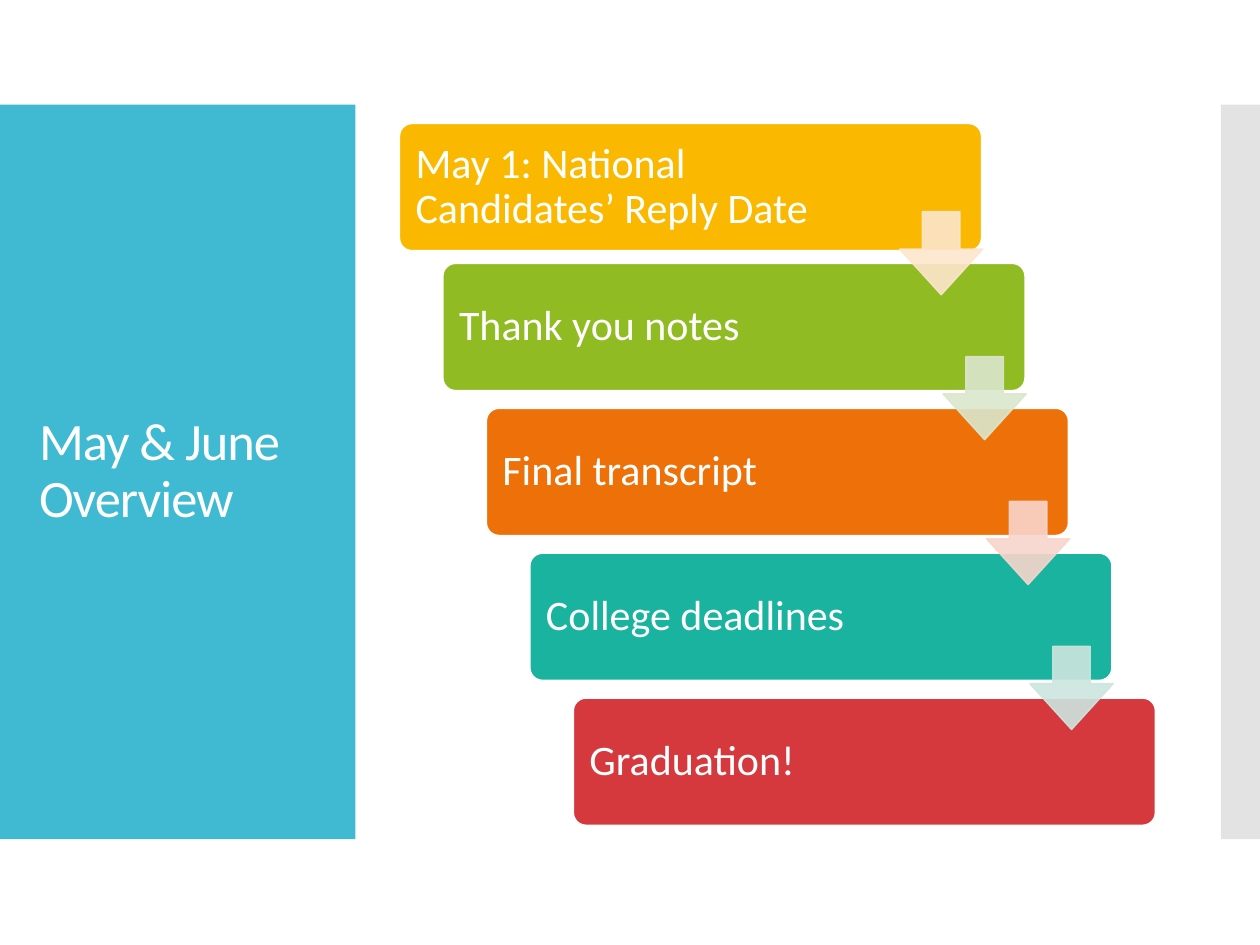
"""Build the May and June overview slide: a title panel and a descending staircase of steps."""
from dataclasses import dataclass

from lxml import etree
from pptx import Presentation
from pptx import util as u
from pptx.dml.color import RGBColor
from pptx.enum import shapes, text
from pptx.oxml.ns import qn


@dataclass(frozen=True)
class Theme:
    """Colours and type sizes of the slide."""
    font: str = "Calibri"
    title_size: int = 30
    step_size: int = 24
    line_width: float = 0.85
    white: str = "FFFFFF"
    panel: str = "40BAD2"
    edge: str = "C8C8C8"
    cards: tuple = ("FAB900", "90BB23", "EE7008", "1AB39F", "D5393D")
    arrows: tuple = ("FDE6CC", "DBE7CD", "F8D5CC", "CDE5DF")


THEME = Theme()
TITLE = "May & June Overview"
STEPS = ("May 1: National Candidates’ Reply Date", "Thank you notes",
         "Final transcript", "College deadlines", "Graduation!")
COL, ROW = 0.345, 1.15
CARD_LEFT, CARD_TOP, CARD_W, CARD_H = 3.17, 0.94, 4.62, 1.01
FIRST_DROP = 0.04
ARROW_LEFT, ARROW_TOP, ARROW_SIZE = 7.14, 1.68, 0.66


def paint(fmt, color, alpha=100):
    """Set a solid colour with the given opacity in percent."""
    fmt.solid()
    fmt.fore_color.rgb = RGBColor.from_string(color)
    if alpha < 100:
        clr = fmt._xPr.find(f"{qn('a:solidFill')}/{qn('a:srgbClr')}")
        etree.SubElement(clr, qn("a:alpha"), val=str(alpha * 1000))


def add_block(slide, kind, box, color, alpha=100, adj=(), line=None):
    """Add a flat preset shape, outlined only when a line colour is given."""
    sp = slide.shapes.add_shape(kind, *(u.Inches(v) for v in box))
    sp.shadow.inherit = False
    for i, value in enumerate(adj):
        sp.adjustments[i] = value
    paint(sp.fill, color, alpha)
    if line:
        sp.line.width = u.Pt(THEME.line_width)
        paint(sp.line.fill, line, alpha)
    else:
        sp.line.fill.background()
    return sp


def write(sp, words, size):
    """Write one left-aligned, vertically centred paragraph in white."""
    tf = sp.text_frame
    tf.word_wrap = True
    tf.auto_size = text.MSO_AUTO_SIZE.NONE
    tf.vertical_anchor = text.MSO_ANCHOR.MIDDLE
    p = tf.paragraphs[0]
    p.alignment = text.PP_ALIGN.LEFT
    p.line_spacing = 0.9
    r = p.add_run()
    r.text = words
    r.font.name = THEME.font
    r.font.size = u.Pt(size)
    r.font.color.rgb = RGBColor.from_string(THEME.white)
    return r


def add_bands(slide):
    """Add the title panel and the strip at the right edge."""
    rect = shapes.MSO_SHAPE.RECTANGLE
    add_block(slide, rect, (0, 0.83, 2.82, 5.83), THEME.panel)
    add_block(slide, rect, (9.69, 0.83, 0.31, 5.83), THEME.edge, alpha=50)


def place_title(slide):
    """Format the title and bring it in front of its panel."""
    sp = slide.shapes.title
    sp.left, sp.top, sp.width, sp.height = (u.Inches(v) for v in (0.21, 1.23, 2.42, 5.03))
    r = write(sp, TITLE, THEME.title_size)
    r.font._element.set("spc", "-60")
    sp.element.getparent().append(sp.element)


def add_card(slide, i, words):
    """Add step card i, one column right and one row down from the last."""
    top = CARD_TOP + i * ROW + (FIRST_DROP if i == 0 else 0)
    box = (CARD_LEFT + i * COL, top, CARD_W, CARD_H)
    sp = add_block(slide, shapes.MSO_SHAPE.ROUNDED_RECTANGLE, box,
                   THEME.cards[i], adj=(0.1,), line=THEME.white)
    tf = sp.text_frame
    tf.margin_left = tf.margin_top = tf.margin_bottom = u.Inches(0.1)
    tf.margin_right = u.Inches(1.1)
    write(sp, words, THEME.step_size)


def add_arrow(slide, i, color):
    """Add the translucent arrow from card i to the next one."""
    box = (ARROW_LEFT + i * COL, ARROW_TOP + i * ROW, ARROW_SIZE, ARROW_SIZE)
    add_block(slide, shapes.MSO_SHAPE.DOWN_ARROW, box, color,
              alpha=90, adj=(0.45, 0.55), line=color)


def main():
    """Build and save the slide."""
    prs = Presentation()
    prs.slide_width, prs.slide_height = u.Inches(10), u.Inches(7.5)
    slide = prs.slides.add_slide(prs.slide_layouts[5])
    add_bands(slide)
    place_title(slide)
    for i, words in enumerate(STEPS):
        add_card(slide, i, words)
    for i, color in enumerate(THEME.arrows):
        add_arrow(slide, i, color)
    prs.save("out.pptx")


if __name__ == "__main__":
    main()
